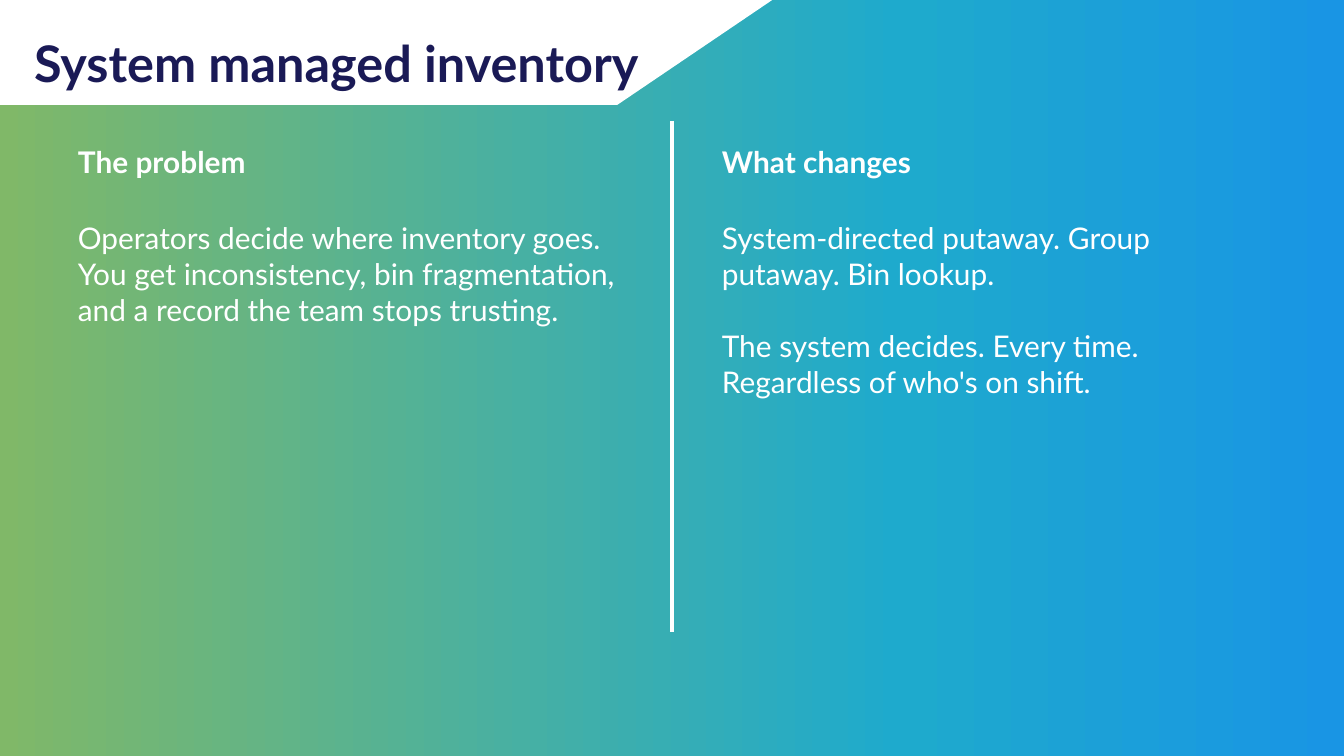
import copy

import pptx
import pptx.dml.color
import pptx.enum.shapes
import pptx.enum.text
import pptx.oxml.ns
import pptx.util
from lxml import etree

TITLE = "System managed inventory"
COLUMNS = [
    ("The problem", [
        ("Operators decide where inventory goes.", 0),
        ("You get inconsistency, bin fragmentation, and a record the team stops trusting.", 0),
    ]),
    ("What changes", [
        ("System-directed putaway. Group putaway. Bin lookup.", 0),
        ("The system decides. Every time. Regardless of who's on shift.", 25.6),
    ]),
]
GRADIENT = [(0, "80B868"), (0.67, "1EAACD"), (1, "1995E4")]
WHITE, NAVY = "FFFFFF", "1A1A56"
FONT = "Lato"

WIDTH, HEIGHT = 1344, 756
BANNER_BOX = (-606, -102, 1529, 207)
TITLE_BOX = (34, 1, 619, 91)
DIVIDER_TOP, DIVIDER_BOTTOM = 121, 632
COLUMN_WIDTH, GUTTER = 564, 40
HEAD_TOP, HEAD_HEIGHT = 121, 81
BODY_TOP, BODY_HEIGHT = 215, 430
EMU_PER_PX = 12192000 / WIDTH


def px(n):
    return pptx.util.Emu(round(n * EMU_PER_PX))


def color(value):
    return pptx.dml.color.RGBColor.from_string(value)


def write(sp, paragraphs, size=21.33, fill=WHITE, bold=False, anchor="TOP", line=None):
    """Fill a shape with (text, points of space before) paragraphs."""
    tf = sp.text_frame
    tf.word_wrap = True
    tf.auto_size = pptx.enum.text.MSO_AUTO_SIZE.NONE
    tf.vertical_anchor = pptx.enum.text.MSO_ANCHOR[anchor]
    for i, (text, before) in enumerate(paragraphs):
        p = tf.add_paragraph() if i else tf.paragraphs[0]
        p.alignment = pptx.enum.text.PP_ALIGN.LEFT
        if before:
            p.space_before = pptx.util.Pt(before)
        if line:
            p.line_spacing = pptx.util.Pt(line)
        r = p.add_run()
        r.text = text
        r.font.name = FONT
        r.font.size = pptx.util.Pt(size)
        r.font.bold = bold
        r.font.color.rgb = color(fill)


def paint_background(slide):
    fill = slide.background.fill
    fill.gradient()
    fill.gradient_angle = 0
    stops = slide.background._cSld.find(".//" + pptx.oxml.ns.qn("a:gsLst"))
    stops.append(copy.deepcopy(stops[0]))
    for stop, (position, value) in zip(fill.gradient_stops, GRADIENT):
        stop.position = position
        stop.color.rgb = color(value)


def add_divider(slide):
    x = px(WIDTH / 2)
    line = slide.shapes.add_connector(
        pptx.enum.shapes.MSO_CONNECTOR.STRAIGHT, x, px(DIVIDER_TOP), x, px(DIVIDER_BOTTOM))
    line.line.color.rgb = color(WHITE)
    line.line.width = pptx.util.Pt(3)
    etree.SubElement(line._element.spPr, pptx.oxml.ns.qn("a:effectLst"))


def add_columns(slide):
    lefts = (WIDTH / 2 - GUTTER - COLUMN_WIDTH, WIDTH / 2 + GUTTER)
    for left, (heading, body) in zip(lefts, COLUMNS):
        head = slide.shapes.add_textbox(px(left), px(HEAD_TOP), px(COLUMN_WIDTH), px(HEAD_HEIGHT))
        write(head, [(heading, 0)], bold=True, anchor="MIDDLE")
        text = slide.shapes.add_textbox(px(left), px(BODY_TOP), px(COLUMN_WIDTH), px(BODY_HEIGHT))
        write(text, body)


def add_title(slide):
    banner = slide.shapes.add_shape(
        pptx.enum.shapes.MSO_SHAPE.FLOWCHART_DATA, *map(px, BANNER_BOX))
    banner.shadow.inherit = False
    banner.fill.solid()
    banner.fill.fore_color.rgb = color(WHITE)
    banner.line.fill.background()

    title = slide.shapes.title
    banner._element.addnext(title._element)  # keeps the title above its banner
    title.left, title.top, title.width, title.height = map(px, TITLE_BOX)
    tf = title.text_frame
    tf.margin_left = tf.margin_top = tf.margin_right = tf.margin_bottom = 0
    write(title, [(TITLE, 0)], size=36, fill=NAVY, bold=True, line=65.3)


def main():
    prs = pptx.Presentation()
    prs.slide_width, prs.slide_height = px(WIDTH), px(HEIGHT)
    slide = prs.slides.add_slide(prs.slide_layouts.get_by_name("Title Only"))
    paint_background(slide)
    add_columns(slide)
    add_divider(slide)
    add_title(slide)
    prs.save("out.pptx")


if __name__ == "__main__":
    main()
